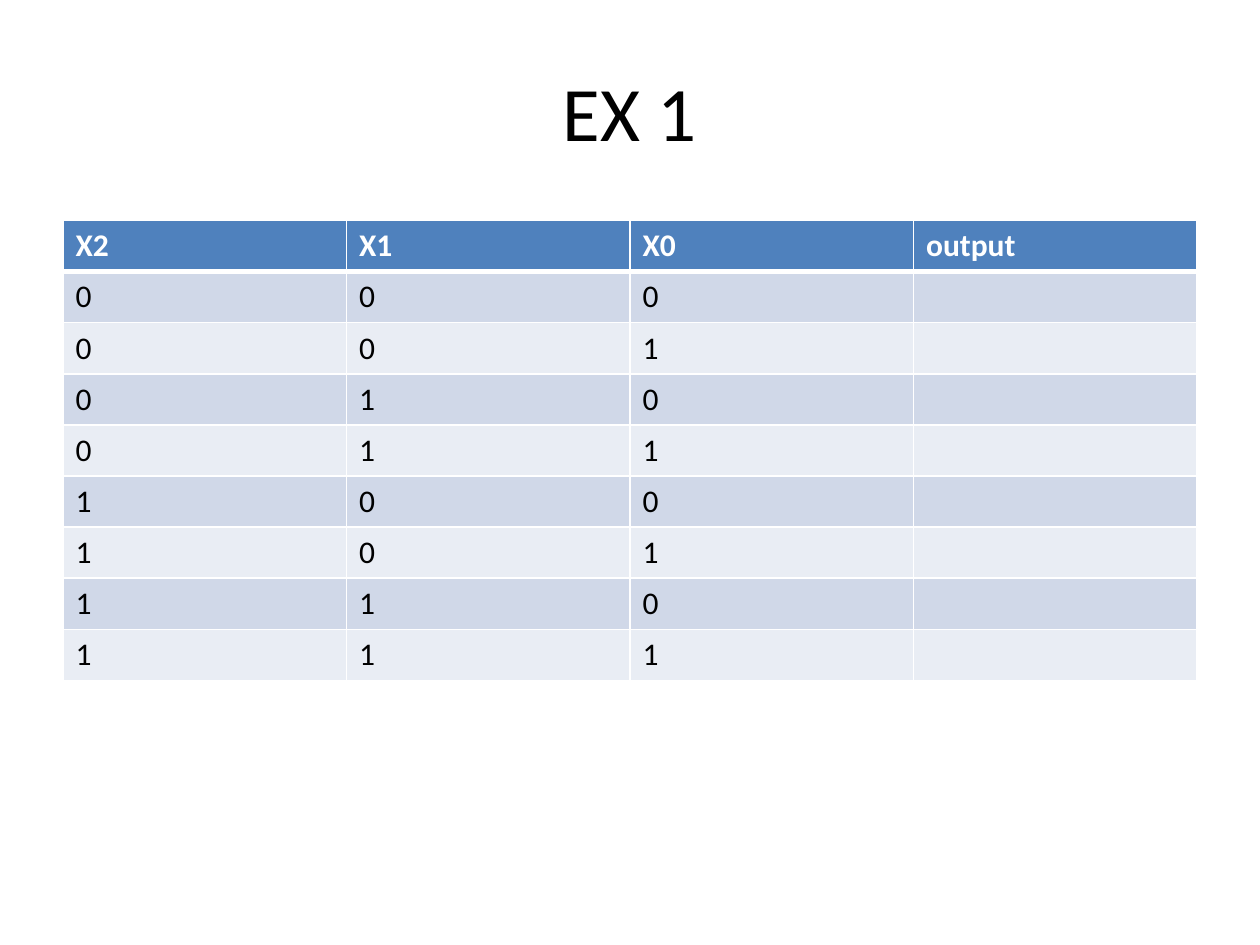
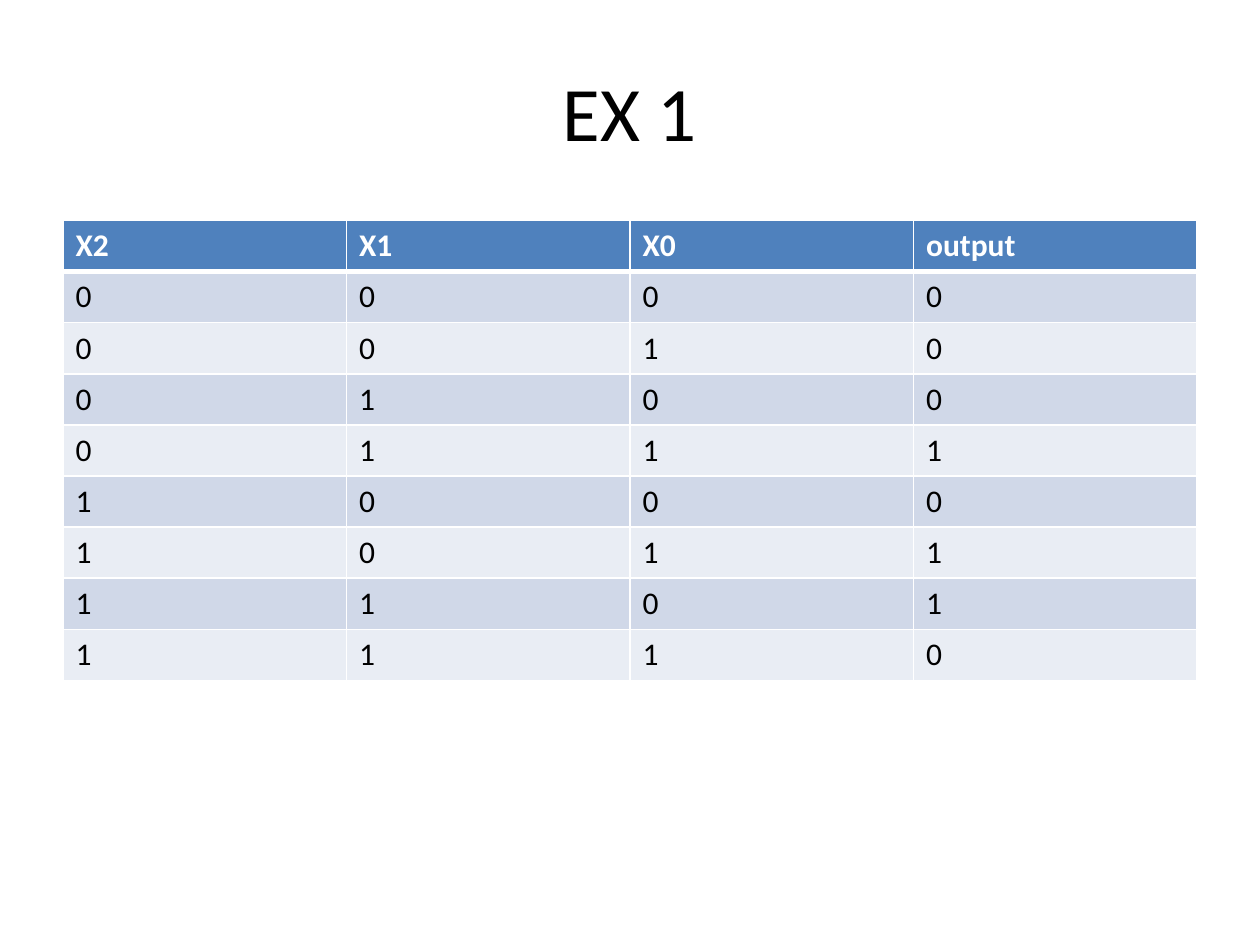
from itertools import product

from lxml import etree
from pptx import Presentation
from pptx import util as u
from pptx.dml.color import RGBColor
from pptx.enum import text
from pptx.oxml import ns

FONT = "Calibri"
COLORS = {
    "header": "4F81BD",
    "odd_row": "D0D8E8",
    "even_row": "E9EDF4",
    "border": "FFFFFF",
    "header_text": "FFFFFF",
    "text": "000000",
}
TITLE_ONLY = 5
MARGIN = 36
CONTENT_WIDTH = 648
TITLE_TOP, TITLE_HEIGHT = 18, 90
TABLE_TOP, ROW_HEIGHT = 126, 29.2
THIN, THICK = 1, 3
HEADINGS = ["X2", "X1", "X0", "output"]
OUTPUTS = "00010110"


def color(name):
    return RGBColor.from_string(COLORS[name])


def style_paragraph(para, size, color_name, bold=False):
    para.font.name = FONT
    para.font.size = u.Pt(size)
    para.font.bold = bold
    para.font.color.rgb = color(color_name)


def add_title(page, words):
    title = page.shapes.title
    title.left, title.top = u.Pt(MARGIN), u.Pt(TITLE_TOP)
    title.width, title.height = u.Pt(CONTENT_WIDTH), u.Pt(TITLE_HEIGHT)
    frame = title.text_frame
    frame.text = words
    frame.vertical_anchor = text.MSO_ANCHOR.MIDDLE
    para = frame.paragraphs[0]
    para.alignment = text.PP_ALIGN.CENTER
    style_paragraph(para, 44, "text")


def set_borders(cell, top, bottom):
    properties = cell._tc.get_or_add_tcPr()
    widths = {"a:lnL": THIN, "a:lnR": THIN, "a:lnT": top, "a:lnB": bottom}
    for side, width in widths.items():
        line = etree.SubElement(properties, ns.qn(side), w=str(u.Pt(width)))
        fill = etree.SubElement(line, ns.qn("a:solidFill"))
        etree.SubElement(fill, ns.qn("a:srgbClr"), val=COLORS["border"])


def style_cell(cell, row):
    is_header = row == 0
    set_borders(cell, THICK if row == 1 else THIN, THICK if is_header else THIN)
    band = "header" if is_header else ("odd_row" if row % 2 else "even_row")
    cell.fill.solid()
    cell.fill.fore_color.rgb = color(band)
    text_color = "header_text" if is_header else "text"
    style_paragraph(cell.text_frame.paragraphs[0], 18, text_color, is_header)


def add_truth_table(page, outputs):
    inputs = product("01", repeat=len(HEADINGS) - 1)
    rows = [HEADINGS] + [[*bits, output] for bits, output in zip(inputs, outputs)]
    frame = page.shapes.add_table(
        len(rows), len(HEADINGS), u.Pt(MARGIN), u.Pt(TABLE_TOP),
        u.Pt(CONTENT_WIDTH), u.Pt(ROW_HEIGHT * len(rows)))
    table = frame.table
    for table_row in table.rows:
        table_row.height = u.Pt(ROW_HEIGHT)
    for row, values in enumerate(rows):
        for column, value in enumerate(values):
            cell = table.cell(row, column)
            cell.text = value
            style_cell(cell, row)


def add_exercise(deck, outputs):
    page = deck.slides.add_slide(deck.slide_layouts[TITLE_ONLY])
    add_title(page, "EX 1")
    add_truth_table(page, outputs)


def main():
    deck = Presentation()
    deck.slide_width, deck.slide_height = u.Pt(720), u.Pt(540)
    add_exercise(deck, [""] * len(OUTPUTS))
    add_exercise(deck, OUTPUTS)
    deck.save("out.pptx")


if __name__ == "__main__":
    main()
